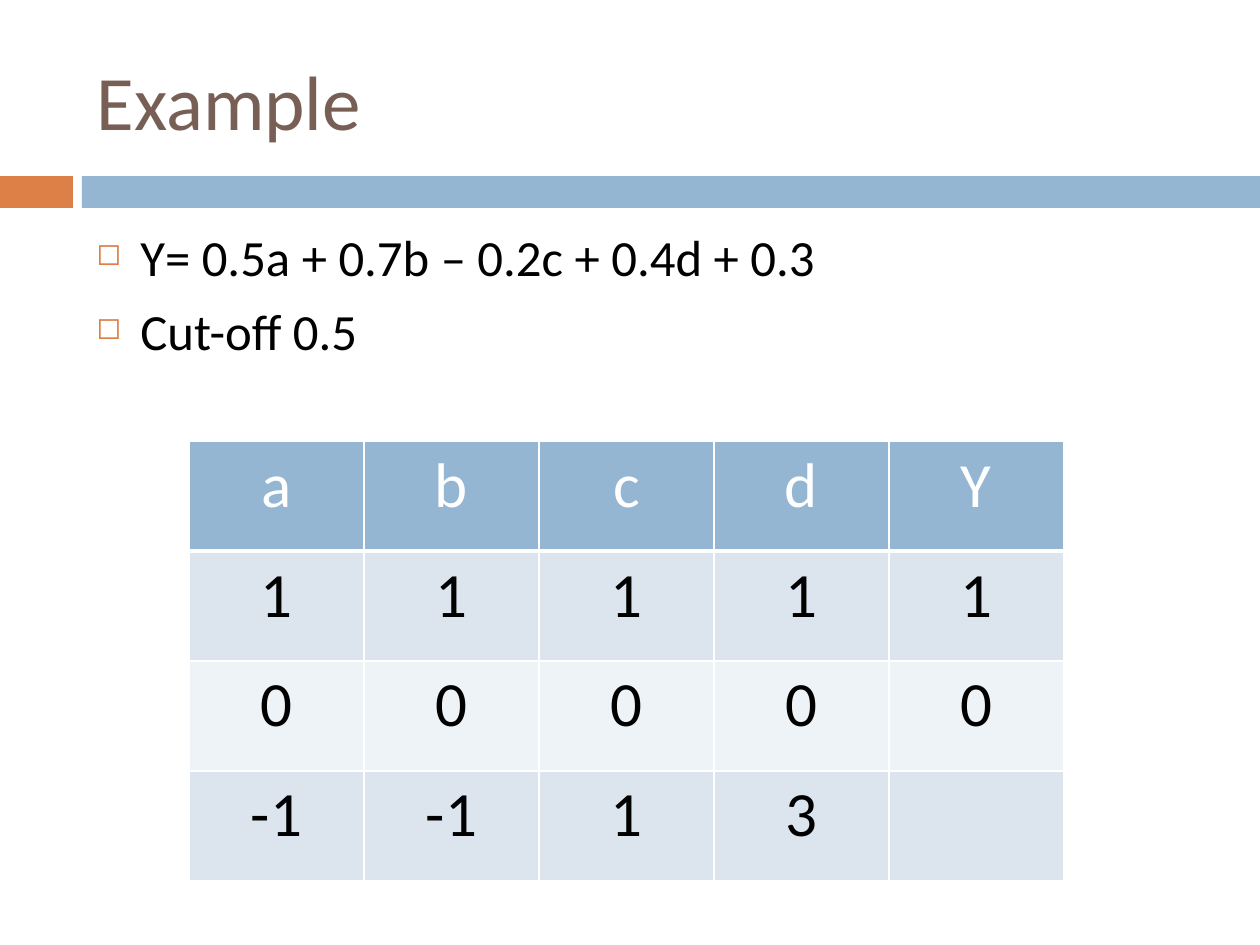
from lxml import etree
from pptx import Presentation
from pptx.dml.color import RGBColor
from pptx.enum.shapes import MSO_SHAPE
from pptx.enum.text import MSO_ANCHOR, MSO_AUTO_SIZE, PP_ALIGN
from pptx.oxml.ns import qn
from pptx.util import Emu, Pt

RECTANGLE = MSO_SHAPE.RECTANGLE
TOP, MIDDLE = MSO_ANCHOR.TOP, MSO_ANCHOR.MIDDLE
LEFT, CENTER = PP_ALIGN.LEFT, PP_ALIGN.CENTER
NO_AUTOFIT = MSO_AUTO_SIZE.NONE
EMU_PER_PX = 914400 / 126
TITLE_ONLY = 5

BLUE, ORANGE, BROWN = "94B6D2", "DD8047", "775F55"
WHITE, BLACK = "FFFFFF", "000000"
BAND_FILLS = ["DCE5EE", "EEF3F7"]

FORMULA_LINES = ["Y= 0.5a + 0.7b – 0.2c + 0.4d + 0.3", "Cut-off 0.5"]
SAMPLES = [
    ["a", "b", "c", "d", "Y"],
    ["1", "1", "1", "1", "1"],
    ["0", "0", "0", "0", "0"],
    ["-1", "-1", "1", "3", ""],
]


def px(length):
    return Emu(round(length * EMU_PER_PX))


def rgb(code):
    return RGBColor.from_string(code)


def apply(target, values):
    for name, value in values.items():
        setattr(target, name, value)


def place(shape, left, top, width, height):
    apply(shape, {"left": px(left), "top": px(top),
                  "width": px(width), "height": px(height)})


def write(paragraph, text, size, color, align):
    paragraph.alignment = align
    paragraph.text = text
    apply(paragraph.font, {"name": "Calibri", "size": Pt(size), "bold": False})
    paragraph.font.color.rgb = rgb(color)
    for run in paragraph.runs:
        apply(run.font, {"name": "Calibri", "size": Pt(size), "bold": False})
        run.font.color.rgb = rgb(color)


def add_child(parent, tag, **attributes):
    return etree.SubElement(parent, qn(tag), attributes)


def add_bar(slide, left, width, color):
    bar = slide.shapes.add_shape(RECTANGLE, px(left), px(176), px(width), px(32))
    bar.shadow.inherit = False
    bar.fill.solid()
    bar.fill.fore_color.rgb = rgb(color)
    bar.line.fill.background()


def set_title(slide, text):
    title = slide.shapes.title
    place(title, 84, 32, 1124, 136)
    apply(title.text_frame, {"vertical_anchor": MIDDLE, "word_wrap": True,
                             "auto_size": NO_AUTOFIT})
    write(title.text_frame.paragraphs[0], text, 44, BROWN, LEFT)


def add_bullet(paragraph):
    properties = paragraph._p.get_or_add_pPr()
    properties.set("marL", str(px(44)))
    properties.set("indent", str(-px(44)))
    bullet_color = add_child(properties, "a:buClr")
    add_child(bullet_color, "a:srgbClr", val=ORANGE)
    add_child(properties, "a:buSzPct", val="60000")
    add_child(properties, "a:buChar", char="◻")


def add_bullet_list(slide, lines):
    body = slide.shapes.add_textbox(px(84), px(220), px(1124), px(168))
    frame = body.text_frame
    apply(frame, {"word_wrap": True, "vertical_anchor": TOP,
                  "auto_size": NO_AUTOFIT})
    for index, line in enumerate(lines):
        paragraph = frame.add_paragraph() if index else frame.paragraphs[0]
        write(paragraph, line, 29, BLACK, LEFT)
        paragraph.space_before = Pt(7)
        add_bullet(paragraph)


def set_borders(cell, widths):
    properties = cell._tc.get_or_add_tcPr()
    for position, (side, width) in enumerate(widths.items()):
        border = etree.Element(qn(f"a:{side}"), w=str(Pt(width)))
        fill = add_child(border, "a:solidFill")
        add_child(fill, "a:srgbClr", val=WHITE)
        properties.insert(position, border)


def add_sample_table(slide, samples):
    frame = slide.shapes.add_table(len(samples), len(samples[0]),
                                   px(189), px(441), px(875), px(440))
    table = frame.table
    for column in table.columns:
        column.width = px(175)
    for row_index, values in enumerate(samples):
        is_header = row_index == 0
        table.rows[row_index].height = px(110)
        fill = BLUE if is_header else BAND_FILLS[(row_index - 1) % 2]
        top_width = 3 if row_index == 1 else 1
        bottom_width = 3 if is_header else 1
        for column_index, value in enumerate(values):
            cell = table.cell(row_index, column_index)
            apply(cell, {"margin_left": px(9), "margin_right": px(9),
                         "margin_top": px(6), "margin_bottom": px(6)})
            cell.fill.solid()
            cell.fill.fore_color.rgb = rgb(fill)
            set_borders(cell, {"lnL": 1, "lnR": 1,
                               "lnT": top_width, "lnB": bottom_width})
            write(cell.text_frame.paragraphs[0], value, 36,
                  WHITE if is_header else BLACK, CENTER)


def main():
    deck = Presentation()
    apply(deck, {"slide_width": px(1260), "slide_height": px(945)})
    slide = deck.slides.add_slide(deck.slide_layouts[TITLE_ONLY])
    add_bar(slide, 0, 73, ORANGE)
    add_bar(slide, 82, 1178, BLUE)
    set_title(slide, "Example")
    add_bullet_list(slide, FORMULA_LINES)
    add_sample_table(slide, SAMPLES)
    deck.save("out.pptx")


if __name__ == "__main__":
    main()
